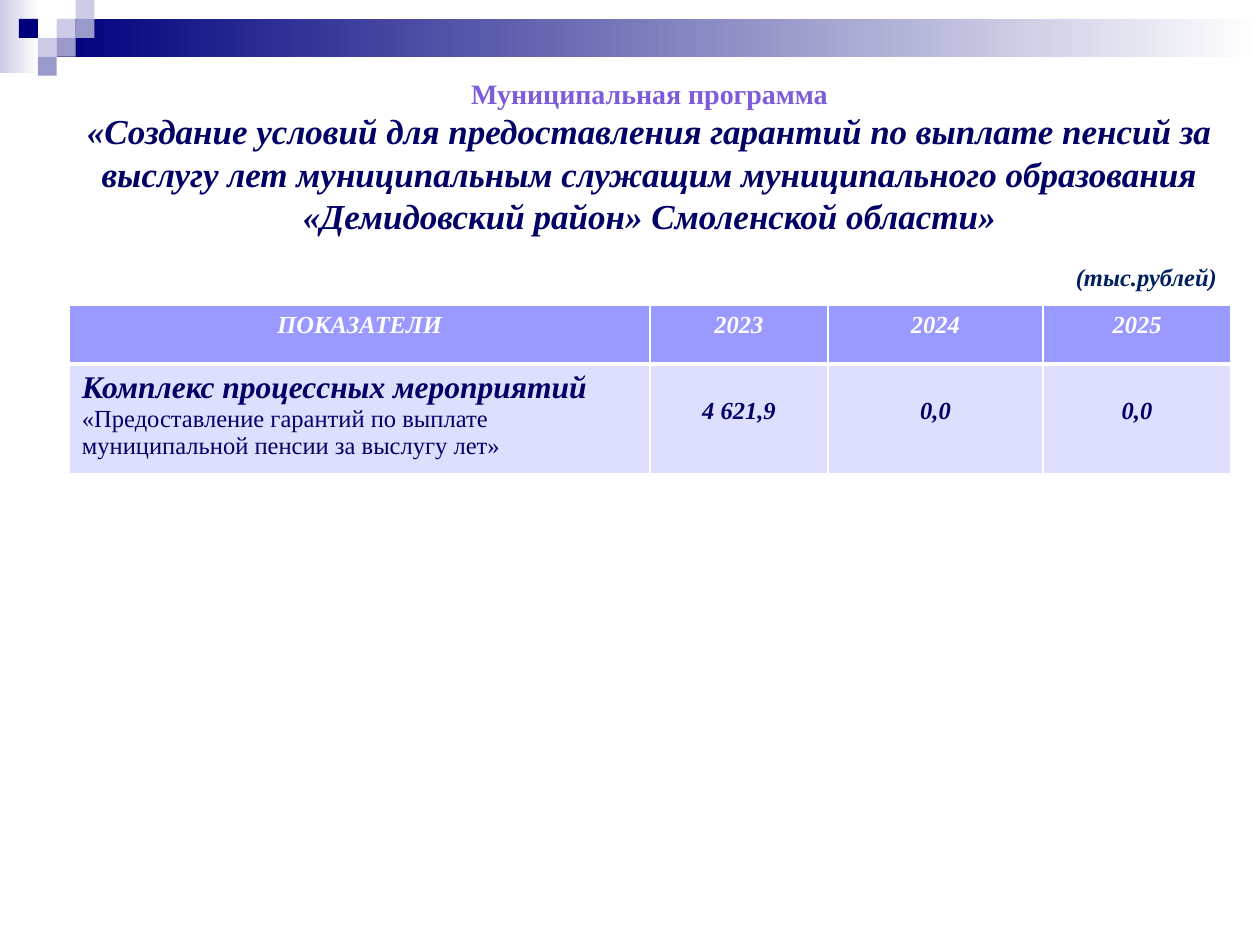
from lxml import etree
from pptx import Presentation
from pptx.dml.color import RGBColor
from pptx.enum.shapes import MSO_SHAPE
from pptx.enum.text import MSO_AUTO_SIZE, PP_ALIGN
from pptx.oxml.ns import qn
from pptx.util import Inches, Pt

COLORS = {
    "navy": "00007D", "mid": "9999CC", "pale": "CCCCE6", "white": "FFFFFF",
    "violet": "7D5CDA", "text": "000066", "unit": "002060",
    "header": "9999FF", "row": "DEDEFF",
}
FONT = "Times New Roman"


def rgb(color):
    return RGBColor.from_string(COLORS[color])


def set_font(font, size, color, bold=True, italic=True):
    font.name, font.size = FONT, Pt(size)
    font.bold, font.italic = bold, italic
    font.color.rgb = rgb(color)


def add_block(slide, left, top, width, height, color, fade_to=None):
    """Add a borderless rectangle, fading to the right if fade_to is given."""
    block = slide.shapes.add_shape(
        MSO_SHAPE.RECTANGLE, Inches(left), Inches(top), Inches(width), Inches(height))
    block.shadow.inherit = False
    block.line.fill.background()
    if fade_to:
        block.fill.gradient()
        block.fill.gradient_angle = 0
        for stop, stop_color in zip(block.fill.gradient_stops, (color, fade_to)):
            stop.color.rgb = rgb(stop_color)
    else:
        block.fill.solid()
        block.fill.fore_color.rgb = rgb(color)


def add_banner(slide, left, top, width):
    add_block(slide, left, top, 0.31, 0.58, "pale", "white")
    add_block(slide, left + 0.45, top + 0.15, width - 0.45, 0.3, "navy", "white")
    side = 0.15
    squares = [(3, 1, "pale"), (4, 0, "pale"), (4, 1, "mid"), (2, 2, "pale"),
               (1, 1, "navy"), (3, 2, "mid"), (2, 3, "mid")]
    for column, row, color in squares:
        add_block(slide, left + column * side, top + row * side, side, side, color)


def place_title(slide, left, top, width, height):
    title = slide.shapes.title
    title.left, title.top = Inches(left), Inches(top)
    title.width, title.height = Inches(width), Inches(height)
    frame = title.text_frame
    frame.word_wrap = True
    frame.auto_size = MSO_AUTO_SIZE.SHAPE_TO_FIT_TEXT
    frame.text = (
        "Муниципальная программа\n"
        "«Создание условий для предоставления гарантий по выплате пенсий за "
        "выслугу лет муниципальным служащим муниципального образования "
        "«Демидовский район» Смоленской области»")
    kind, name = frame.paragraphs
    set_font(kind.font, 16, "violet", italic=False)
    set_font(name.font, 20, "text")
    for paragraph in frame.paragraphs:
        paragraph.alignment = PP_ALIGN.CENTER


def add_unit_label(slide, left, top, width, height):
    label = slide.shapes.add_textbox(
        Inches(left), Inches(top), Inches(width), Inches(height))
    frame = label.text_frame
    frame.word_wrap = False
    frame.auto_size = MSO_AUTO_SIZE.SHAPE_TO_FIT_TEXT
    frame.text = "(тыс.рублей)"
    set_font(frame.paragraphs[0].font, 14, "unit")


def format_cell(cell, fill, top_border=1, bottom_border=1):
    """Give the cell white borders, in points, and a plain fill."""
    properties = cell._tc.get_or_add_tcPr()
    borders = {"a:lnL": 1, "a:lnR": 1, "a:lnT": top_border, "a:lnB": bottom_border}
    for tag, points in borders.items():
        line = etree.SubElement(properties, qn(tag), w=str(Pt(points)))
        line_fill = etree.SubElement(line, qn("a:solidFill"))
        etree.SubElement(line_fill, qn("a:srgbClr"), val=COLORS["white"])
    cell.fill.solid()
    cell.fill.fore_color.rgb = rgb(fill)


def write_centered(cell, text, color):
    cell.text = text
    paragraph = cell.text_frame.paragraphs[0]
    paragraph.alignment = PP_ALIGN.CENTER
    set_font(paragraph.font, 14, color)


def add_indicator_table(slide, left, top):
    column_widths = (4.61, 1.41, 1.71, 1.49)
    row_heights = (0.47, 0.85)
    headings = ("ПОКАЗАТЕЛИ", "2023", "2024", "2025")
    amounts = ("4 621,9", "0,0", "0,0")

    table = slide.shapes.add_table(
        len(row_heights), len(column_widths), Inches(left), Inches(top),
        Inches(sum(column_widths)), Inches(sum(row_heights))).table
    for column, width in zip(table.columns, column_widths):
        column.width = Inches(width)
    for row, height in zip(table.rows, row_heights):
        row.height = Inches(height)

    for index, heading in enumerate(headings):
        format_cell(table.cell(0, index), "header", bottom_border=3)
        write_centered(table.cell(0, index), heading, "white")
        format_cell(table.cell(1, index), "row", top_border=3)

    measure = table.cell(1, 0).text_frame.paragraphs[0]
    kind, name = measure.add_run(), measure.add_run()
    kind.text = "Комплекс процессных мероприятий "
    set_font(kind.font, 18, "text")
    name.text = "«Предоставление гарантий по выплате муниципальной пенсии за выслугу лет»"
    set_font(name.font, 14, "text", bold=False, italic=False)

    for index, amount in enumerate(amounts, start=1):
        cell = table.cell(1, index)
        cell.margin_top = Inches(0.27)
        write_centered(cell, amount, "text")


def main():
    presentation = Presentation()
    presentation.slide_width, presentation.slide_height = Inches(10), Inches(7.5)
    slide = presentation.slides.add_slide(presentation.slide_layouts[5])
    add_banner(slide, 0, 0, 10)
    place_title(slide, 0.31, 0.55, 9.69, 1.38)
    add_indicator_table(slide, 0.55, 2.42)
    add_unit_label(slide, 8.44, 2.03, 1.33, 0.34)
    presentation.save("out.pptx")


if __name__ == "__main__":
    main()
